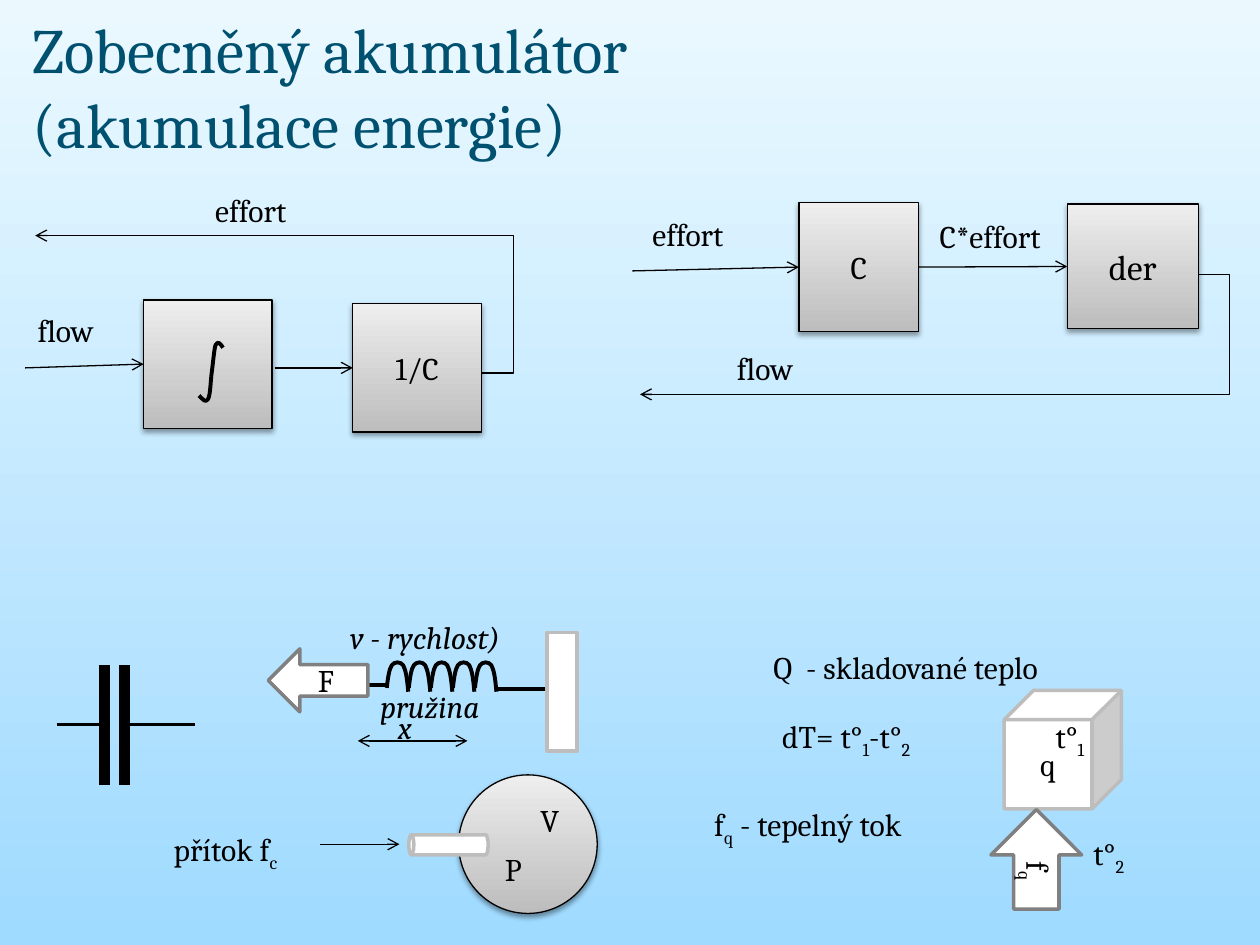
from lxml.etree import SubElement
from pptx import Presentation
from pptx.dml.color import RGBColor
from pptx.enum.shapes import MSO_CONNECTOR, MSO_SHAPE
from pptx.enum.text import MSO_ANCHOR, MSO_AUTO_SIZE, PP_ALIGN
from pptx.oxml.ns import qn
from pptx.util import Inches, Pt

COLORS = {"sky_top": "EBF9FF", "sky_bottom": "9FDAFF", "title": "005070", "ink": "000000",
          "box_dark": "BDBDBD", "box_light": "EEEEEE", "white": "FFFFFF", "gray": "808080"}
RGB = {name: RGBColor.from_string(value) for name, value in COLORS.items()}

prs = Presentation()
prs.slide_width, prs.slide_height = Inches(10), Inches(7.5)
s = prs.slides.add_slide(prs.slide_layouts[6])


def write(shape, text, size=18, color="ink", italic=False):
    """Add text to a shape; every second part between bars is a subscript."""
    p = shape.text_frame.paragraphs[0]
    for i, part in enumerate(text.split("|")):
        r = p.add_run()
        r.text = part
        r.font.name, r.font.size, r.font.italic = "Cambria", Pt(size), italic
        r.font.color.rgb = RGB[color]
        if i % 2:
            r.font._element.set("baseline", "-25000")
    return p


def connect(x1, y1, x2, y2, width=0.75, ends=(), kind=MSO_CONNECTOR.STRAIGHT):
    """Draw a black connector; ends holds headEnd and/or tailEnd for arrowheads."""
    c = s.shapes.add_connector(kind, Inches(x1), Inches(y1), Inches(x2), Inches(y2))
    c.line.color.rgb, c.line.width = RGB["ink"], Pt(width)
    spPr = c._element.spPr
    for end in ends:
        SubElement(spPr.find(qn("a:ln")), qn("a:" + end), type="arrow")
    SubElement(spPr, qn("a:effectLst"))
    return c


# Background
bg = s.background.fill
bg.gradient()
bg.gradient_angle = 270
for stop, name in zip(bg.gradient_stops, ("sky_top", "sky_bottom")):
    stop.color.rgb = RGB[name]

# Title
sp = s.shapes.add_textbox(Inches(0.16), Inches(0.13), Inches(9.73), Inches(1.1))
sp.text_frame.word_wrap = True
sp.text_frame.vertical_anchor = MSO_ANCHOR.MIDDLE
write(sp, "Zobecněný akumulátor ", 36, "title").add_line_break()
write(sp, "(akumulace energie)", 36, "title")

# Feedback paths: start, end, and how far the bend sticks out to the right
for x1, y1, x2, y2, out in [(3.82, 2.96, 0.28, 1.87, 0.26), (9.46, 2.18, 5.08, 3.13, 0.3)]:
    c = connect(x1, y1, x2, y2, ends=["tailEnd"], kind=MSO_CONNECTOR.ELBOW)
    geom = c._element.spPr.find(qn("a:prstGeom"))
    av = geom.find(qn("a:avLst"))
    if av is None:
        av = SubElement(geom, qn("a:avLst"))
    SubElement(av, qn("a:gd"), name="adj1", fmla=f"val {round(-100000 * out / (x1 - x2))}")

# Block diagram boxes and the balloon
blocks = {}
for name, kind, x, y, w, h, text, size in [
        ("integrator", MSO_SHAPE.RECTANGLE, 1.14, 2.38, 1.02, 1.02, "", 18),
        ("inverse", MSO_SHAPE.RECTANGLE, 2.8, 2.41, 1.02, 1.02, "1/C", 18),
        ("capacity", MSO_SHAPE.RECTANGLE, 6.34, 1.61, 0.95, 1.02, "C", 18),
        ("derivative", MSO_SHAPE.RECTANGLE, 8.47, 1.62, 1.04, 0.99, "der", 20),
        ("balloon", MSO_SHAPE.OVAL, 3.64, 6.15, 1.1, 1.1, "", 18)]:
    sp = blocks[name] = s.shapes.add_shape(kind, Inches(x), Inches(y), Inches(w), Inches(h))
    sp.fill.gradient()
    sp.fill.gradient_angle = 90
    for stop, tone in zip(sp.fill.gradient_stops, ("box_dark", "box_light")):
        stop.color.rgb = RGB[tone]
    sp.line.color.rgb, sp.line.width = RGB["ink"], Pt(0.75)
    sp.shadow.inherit = False
    shadow = SubElement(sp._element.spPr.find(qn("a:effectLst")), qn("a:outerShdw"),
                        blurRad=str(Pt(3.1)), dist=str(Pt(1.6)), dir="5400000", rotWithShape="0")
    tone = SubElement(shadow, qn("a:srgbClr"), val=COLORS["ink"])
    SubElement(tone, qn("a:alpha"), val="38000")
    if text:
        write(sp, text, size).alignment = PP_ALIGN.CENTER

# Signal arrows that end at a block, some also starting at one
for x, y, source, target in [(0.2, 2.92, None, "integrator"), (2.18, 2.92, None, "inverse"),
                             (5.02, 2.15, None, "capacity"), (7.29, 2.12, "capacity", "derivative")]:
    c = connect(x, y, x + 1, y, ends=["tailEnd"])
    if source:
        c.begin_connect(blocks[source], 3)
    c.end_connect(blocks[target], 1)

# Inflow arrow and the displacement arrow of the spring
connect(2.54, 6.7, 3.17, 6.7, ends=["tailEnd"])
connect(2.84, 5.88, 3.71, 5.88, ends=["headEnd", "tailEnd"])

# Capacitor plates and leads, then the spring's straight ends
for x in (0.83, 0.99):
    connect(x, 6.23, x, 5.28, width=6)
for x1, x2, y in [(0.45, 0.83, 5.75), (1, 1.55, 5.75), (2.83, 3.07, 5.44), (3.93, 4.34, 5.47)]:
    connect(x1, y, x2, y, width=2.25)

# Integral sign and spring coils: every three points after the first make a cubic curve
integral = [(1.77, 2.76), (1.75, 2.73), (1.73, 2.7), (1.71, 2.74), (1.7, 2.77), (1.69, 2.89),
            (1.68, 2.96), (1.67, 3.04), (1.67, 3.14), (1.65, 3.17), (1.63, 3.2), (1.61, 3.17),
            (1.58, 3.14)]
coil = [(0, 5.46), (0.01, 5.37), (0.02, 5.31), (0.04, 5.28), (0.06, 5.25), (0.11, 5.25),
        (0.13, 5.28), (0.15, 5.32), (0.16, 5.37), (0.17, 5.49)]
for curve in [integral] + [[(3.07 + 0.175 * i + x, y) for x, y in coil] for i in range(5)]:
    points = [(Inches(x), Inches(y)) for x, y in curve]
    fb = s.shapes.build_freeform(*points[0])
    fb.add_line_segments(points[1:], close=False)
    sp = fb.convert_to_shape()
    outline = next(sp._element.iter(qn("a:moveTo"))).getparent()
    segments = outline.findall(qn("a:lnTo"))
    for k in range(0, len(segments), 3):
        cubic = SubElement(outline, qn("a:cubicBezTo"))
        for segment in segments[k:k + 3]:
            cubic.append(segment[0])
            outline.remove(segment)
    sp.fill.background()
    sp.line.color.rgb, sp.line.width = RGB["ink"], Pt(2.25)
    sp.shadow.inherit = False

# White bodies: force arrow, wall, pipe, heat store, heat flow arrow
for kind, x, y, w, h, rotation, flip, edge, text in [
        (MSO_SHAPE.RIGHT_ARROW, 2.13, 5.15, 0.79, 0.5, 0, True, "gray", "F"),
        (MSO_SHAPE.RECTANGLE, 4.34, 5.02, 0.24, 0.94, 0, False, "box_dark", ""),
        (MSO_SHAPE.CAN, 3.48, 6.39, 0.16, 0.63, 270, False, "box_dark", ""),
        (MSO_SHAPE.CUBE, 7.97, 5.48, 0.93, 0.94, 0, False, "box_dark", "q"),
        (MSO_SHAPE.RIGHT_ARROW, 7.83, 6.46, 0.79, 0.72, 90, True, "gray", "f|q")]:
    sp = s.shapes.add_shape(kind, Inches(x), Inches(y), Inches(w), Inches(h))
    sp.rotation = rotation
    if flip:
        sp._element.spPr.find(qn("a:xfrm")).set("flipH", "1")
    sp.fill.solid()
    sp.fill.fore_color.rgb = RGB["white"]
    sp.line.color.rgb, sp.line.width = RGB[edge], Pt(2)
    sp.shadow.inherit = False
    if text:
        write(sp, text).alignment = PP_ALIGN.CENTER

# Labels
for x, y, w, text, italic in [
        (0.2, 2.42, 0.68, "flow", False), (1.61, 1.47, 0.82, "effort", False),
        (5.75, 2.72, 0.78, "flow", False), (5.08, 1.66, 0.94, "effort", False),
        (7.36, 1.67, 1.27, "C*effort", False),
        (2.92, 5.4, 1.09, "pružina", True), (3.06, 5.57, 0.33, "x", True),
        (2.68, 4.86, 1.73, "v - rychlost)", True),
        (1.28, 6.54, 1.1, "přítok f|c", False), (3.91, 6.7, 0.36, "P", False),
        (4.19, 6.31, 0.37, "V", False),
        (6.11, 5.64, 1.35, "dT= t°|1|-t°|2", False),
        (6.04, 5.09, 2.62, "Q  - skladované teplo", False),
        (5.57, 6.34, 1.8, "f|q| - tepelný tok", False),
        (8.28, 5.64, 0.46, "t°|1", False), (8.58, 6.57, 0.48, "t°|2", False)]:
    sp = s.shapes.add_textbox(Inches(x), Inches(y), Inches(w), Inches(0.4))
    sp.text_frame.word_wrap = False
    sp.text_frame.auto_size = MSO_AUTO_SIZE.SHAPE_TO_FIT_TEXT
    write(sp, text, italic=italic)

prs.save("out.pptx")
